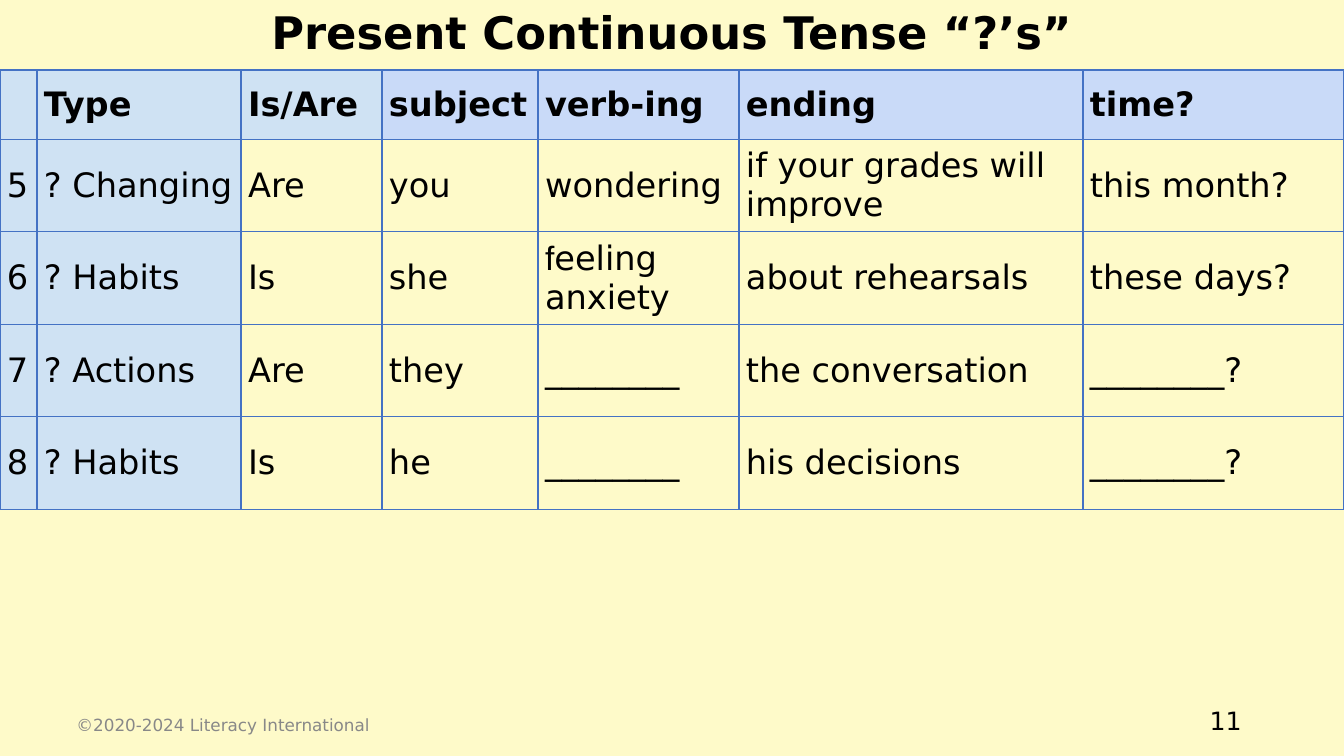
import pptx
import pptx.dml.color
import pptx.enum.text
import pptx.oxml
import pptx.oxml.ns
import pptx.util

Pt = pptx.util.Pt
RGB = pptx.dml.color.RGBColor
ANCHOR = pptx.enum.text.MSO_ANCHOR
ALIGN = pptx.enum.text.PP_ALIGN

CREAM = RGB(0xFE, 0xFA, 0xC9)
PALE_BLUE = RGB(0xCF, 0xE2, 0xF3)
LAVENDER = RGB(0xC9, 0xDA, 0xF8)
BORDER = RGB(0x44, 0x72, 0xC4)
BLACK = RGB(0, 0, 0)
GREY = RGB(0x88, 0x88, 0x88)

FONT = "DejaVu Sans"
NO_STYLE = "{2D5ABB26-0587-4C30-8999-92F81FD0307C}"
COL_WIDTHS = [26.4, 145.8, 100.7, 111.5, 143.5, 245.7, 186.4]
ROW_HEIGHTS = [49.4] + [66.1] * 4
ROWS = [
    ["", "Type", "Is/Are", "subject", "verb-ing", "ending", "time?"],
    ["5", "? Changing", "Are", "you", "wondering", "if your grades will improve", "this month?"],
    ["6", "? Habits", "Is", "she", "feeling anxiety", "about rehearsals", "these days?"],
    ["7", "? Actions", "Are", "they", "________", "the conversation", "________?"],
    ["8", "? Habits", "Is", "he", "________", "his decisions", "________?"],
]


def style_runs(p, size, color=BLACK, bold=False):
    for r in p.runs:
        r.font.name = FONT
        r.font.size = Pt(size)
        r.font.bold = bold
        r.font.color.rgb = color


def set_borders(cell):
    tc_pr = cell._tc.get_or_add_tcPr()
    for i, side in enumerate(("lnL", "lnR", "lnT", "lnB")):
        tc_pr.insert(i, pptx.oxml.parse_xml(
            f'<a:{side} {pptx.oxml.ns.nsdecls("a")} w="{Pt(1)}"><a:solidFill>'
            f'<a:srgbClr val="{BORDER}"/></a:solidFill></a:{side}>'))


def add_title(slide, x, y, w, h):
    sp = slide.shapes.title
    sp.left, sp.top, sp.width, sp.height = Pt(x), Pt(y), Pt(w), Pt(h)
    tf = sp.text_frame
    tf.text = "Present Continuous Tense “?’s”"
    tf.auto_size = pptx.enum.text.MSO_AUTO_SIZE.NONE
    tf.vertical_anchor = ANCHOR.TOP
    tf.paragraphs[0].alignment = ALIGN.CENTER
    style_runs(tf.paragraphs[0], 32, bold=True)


def fill_cell(cell, text, row, col):
    cell.margin_left = cell.margin_right = cell.margin_top = cell.margin_bottom = Pt(5)
    cell.vertical_anchor = ANCHOR.MIDDLE
    p = cell.text_frame.paragraphs[0]
    p.text = text
    style_runs(p, 24, bold=row == 0)
    # Header row and the two label columns are tinted
    if col < 2 or (row == 0 and col == 2):
        cell.fill.solid()
        cell.fill.fore_color.rgb = PALE_BLUE
    elif row == 0:
        cell.fill.solid()
        cell.fill.fore_color.rgb = LAVENDER
    else:
        cell.fill.background()
    set_borders(cell)


def add_question_table(slide, x, y):
    frame = slide.shapes.add_table(len(ROWS), len(COL_WIDTHS), Pt(x), Pt(y),
                                   Pt(sum(COL_WIDTHS)), Pt(sum(ROW_HEIGHTS)))
    table = frame.table
    table.horz_banding = False
    table.first_row = False
    table._tbl.tblPr.find(pptx.oxml.ns.qn("a:tableStyleId")).text = NO_STYLE
    for column, width in zip(table.columns, COL_WIDTHS):
        column.width = Pt(width)
    for row, height in zip(table.rows, ROW_HEIGHTS):
        row.height = Pt(height)
    for i, texts in enumerate(ROWS):
        for j, text in enumerate(texts):
            fill_cell(table.cell(i, j), text, i, j)

    # The first letter of "feeling" is set in Arial
    p = table.cell(2, 4).text_frame.paragraphs[0]
    p.text = "f"
    p.add_run().text = "eeling anxiety"
    style_runs(p, 24)
    p.runs[0].font.name = "Arial"


def add_footer_text(slide, x, y, w, h, text, size, color, align):
    tf = slide.shapes.add_textbox(Pt(x), Pt(y), Pt(w), Pt(h)).text_frame
    tf.word_wrap = True
    tf.vertical_anchor = ANCHOR.MIDDLE
    tf.text = text
    tf.paragraphs[0].alignment = align
    style_runs(tf.paragraphs[0], size, color)


def main():
    prs = pptx.Presentation()
    prs.slide_width, prs.slide_height = Pt(960), Pt(540)
    slide = prs.slides.add_slide(prs.slide_layouts[5])
    slide.background.fill.solid()
    slide.background.fill.fore_color.rgb = CREAM

    add_question_table(slide, 0, 50)
    add_title(slide, 59, 0, 842, 60.5)
    # Footer
    add_footer_text(slide, 678, 500.5, 216, 28.8, "11", 18, BLACK, ALIGN.RIGHT)
    add_footer_text(slide, 47.5, 503.5, 324, 28.8,
                    "©2020-2024 Literacy International", 12, GREY, ALIGN.LEFT)
    prs.save("out.pptx")


if __name__ == "__main__":
    main()
